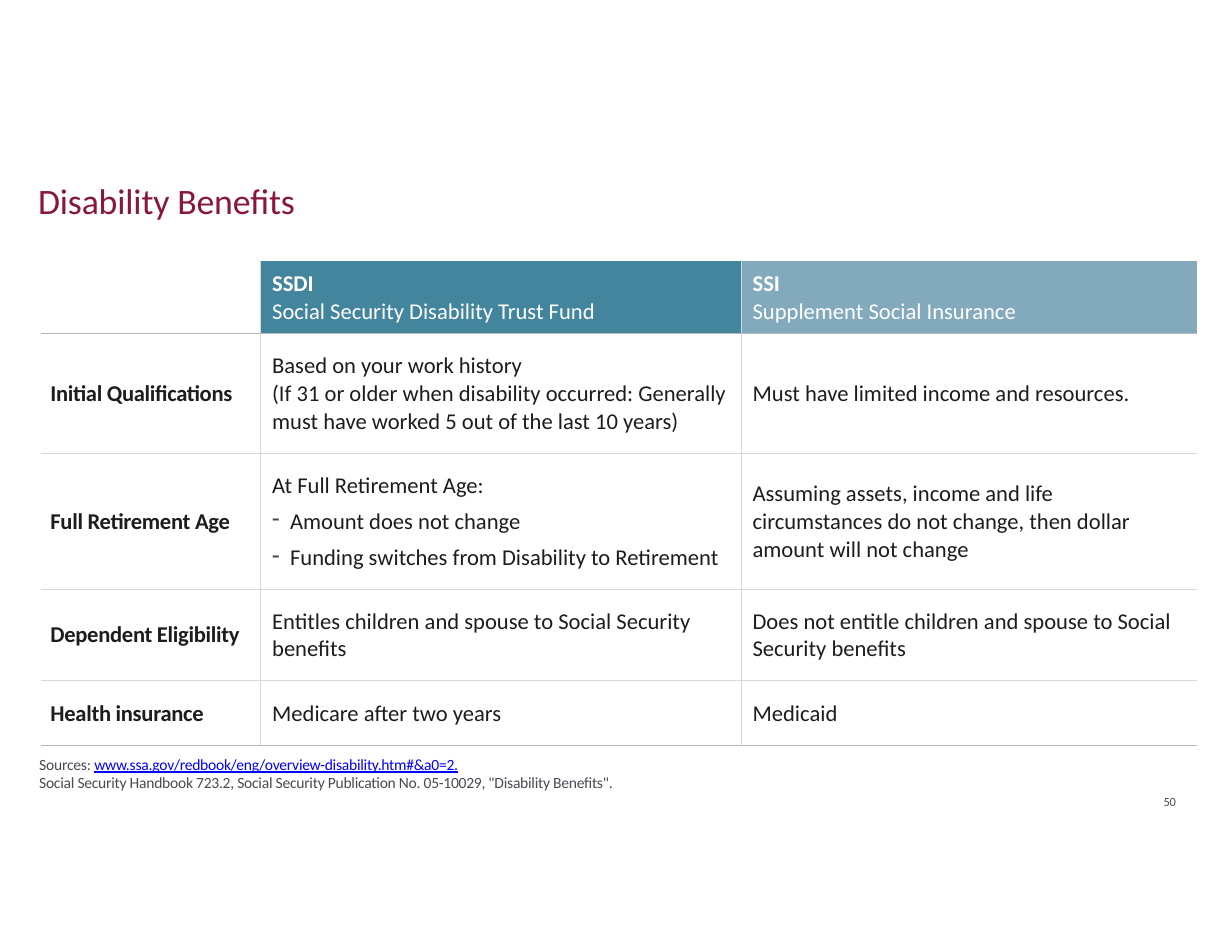
import pptx
import pptx.dml.color
import pptx.enum.text
import pptx.oxml
import pptx.oxml.ns
import pptx.util
from pptx.util import Inches


class Theme:
    font = "Calibri"
    wine, ink, gray, link = "89163D", "1D1D1D", "464B54", "0000FF"
    white, teal, sky = "FFFFFF", "42859C", "83AABC"
    rule, edge = "D8D8D8", "B6B8BC"
    title, body, note, page = 23, 14.5, 10, 8


def add(para, text, size, color, bold=False, track=0):
    run = para.add_run()
    run.text = text
    font = run.font
    font.name, font.size, font.bold = Theme.font, pptx.util.Pt(size), bold
    font.color.rgb = pptx.dml.color.RGBColor.from_string(color)
    if track:
        font._element.set("spc", str(track))
    return run


def box(left, top, width, height, wrap=True):
    frame = slide.shapes.add_textbox(*map(Inches, (left, top, width, height))).text_frame
    frame.margin_left = frame.margin_top = frame.margin_right = frame.margin_bottom = 0
    frame.word_wrap = wrap
    return frame


deck = pptx.Presentation()
deck.slide_width, deck.slide_height = Inches(11), Inches(8.5)
slide = deck.slides.add_slide(deck.slide_layouts[6])

para = box(0.34, 1.6, 10.33, 0.62).paragraphs[0]
add(para, "Disability Benefits", Theme.title, Theme.wine, track=-10)

heads = [
    [],
    ["SSDI", "Social Security Disability Trust Fund"],
    ["SSI", "Supplement Social Insurance"],
]
rows = [
    heads,
    [
        ["Initial Qualifications"],
        ["Based on your work history",
         "(If 31 or older when disability occurred: Generally must have worked 5 out of the last 10 years)"],
        ["Must have limited income and resources."],
    ],
    [
        ["Full Retirement Age"],
        ["At Full Retirement Age:", "- Amount does not change",
         "- Funding switches from Disability to Retirement"],
        ["Assuming assets, income and life circumstances do not change, then dollar amount will not change"],
    ],
    [
        ["Dependent Eligibility"],
        ["Entitles children and spouse to Social Security benefits"],
        ["Does not entitle children and spouse to Social Security benefits"],
    ],
    [["Health insurance"], ["Medicare after two years"], ["Medicaid"]],
]
wide = [1.96, 4.29, 4.07]
tall = [0.65, 1.07, 1.21, 0.82, 0.58]
fills = [None, Theme.teal, Theme.sky]

table = slide.shapes.add_table(
    len(rows), len(wide), Inches(0.37), Inches(2.33), Inches(sum(wide)), Inches(sum(tall))
).table
table.first_row = table.horz_banding = False
for col, width in zip(table.columns, wide):
    col.width = Inches(width)
for row, height in zip(table.rows, tall):
    row.height = Inches(height)

for r, row in enumerate(rows):
    for c, lines in enumerate(row):
        cell = table.cell(r, c)
        head, label = r == 0, c == 0
        cell.margin_left = Inches(0.08 if label else 0.1)
        cell.margin_right = Inches(0.4 if (r, c) == (2, 2) else 0)
        cell.margin_top = cell.margin_bottom = 0
        cell.vertical_anchor = pptx.enum.text.MSO_ANCHOR.MIDDLE

        outer = (Theme.edge, 1)
        inner = (Theme.rule, 0.75)
        lower = outer if r in (0, len(rows) - 1) else inner
        upper = None if head else outer if r == 1 else inner
        sides = {
            "L": None if label else inner,
            "R": None if c == len(wide) - 1 else inner,
            "T": upper,
            "B": lower,
        }
        props = cell._tc.get_or_add_tcPr()
        for side, pen in sides.items():
            line = pptx.oxml.parse_xml(f'<a:ln{side} {pptx.oxml.ns.nsdecls("a")}/>')
            if pen:
                line.set("w", str(pptx.util.Pt(pen[1])))
                solid = pptx.oxml.parse_xml(
                    f'<a:solidFill {pptx.oxml.ns.nsdecls("a")}><a:srgbClr val="{pen[0]}"/></a:solidFill>'
                )
            else:
                solid = pptx.oxml.parse_xml(f'<a:noFill {pptx.oxml.ns.nsdecls("a")}/>')
            line.append(solid)
            props.append(line)
        if head and fills[c]:
            cell.fill.solid()
            cell.fill.fore_color.rgb = pptx.dml.color.RGBColor.from_string(fills[c])
        else:
            cell.fill.background()

        for n, text in enumerate(lines):
            para = cell.text_frame.paragraphs[0] if n == 0 else cell.text_frame.add_paragraph()
            para.line_spacing = 1.02
            if text.startswith("- "):
                text = text[2:]
                para.space_before = pptx.util.Pt(5.3)
                form = para._p.get_or_add_pPr()
                form.set("marL", str(Inches(0.16)))
                form.set("indent", str(Inches(-0.16)))
                for tag in (
                    f'<a:buClr {pptx.oxml.ns.nsdecls("a")}><a:srgbClr val="{Theme.gray}"/></a:buClr>',
                    f'<a:buChar {pptx.oxml.ns.nsdecls("a")} char="-"/>',
                ):
                    form.append(pptx.oxml.parse_xml(tag))
            add(para, text, Theme.body, Theme.white if head else Theme.ink,
                bold=label or (head and n == 0), track=-20 if label else 0)

frame = box(0.35, 6.75, 5.4, 0.33)
first, second = frame.paragraphs[0], frame.add_paragraph()
first.line_spacing = second.line_spacing = pptx.util.Pt(11.4)
add(first, "Sources: ", Theme.note, Theme.gray, track=-10)
site = add(first, "www.ssa.gov/redbook/eng/overview-disability.htm#&a0=2.",
           Theme.note, Theme.link, track=-15)
site.font.underline = True
add(second, 'Social Security Handbook 723.2, Social Security Publication No. 05-10029, "Disability Benefits".',
    Theme.note, Theme.gray, track=-15)

para = box(10.39, 7.1, 0.15, 0.14, wrap=False).paragraphs[0]
para.line_spacing = pptx.util.Pt(8.8)
add(para, "50", Theme.page, Theme.gray, track=-20)

deck.save("out.pptx")
